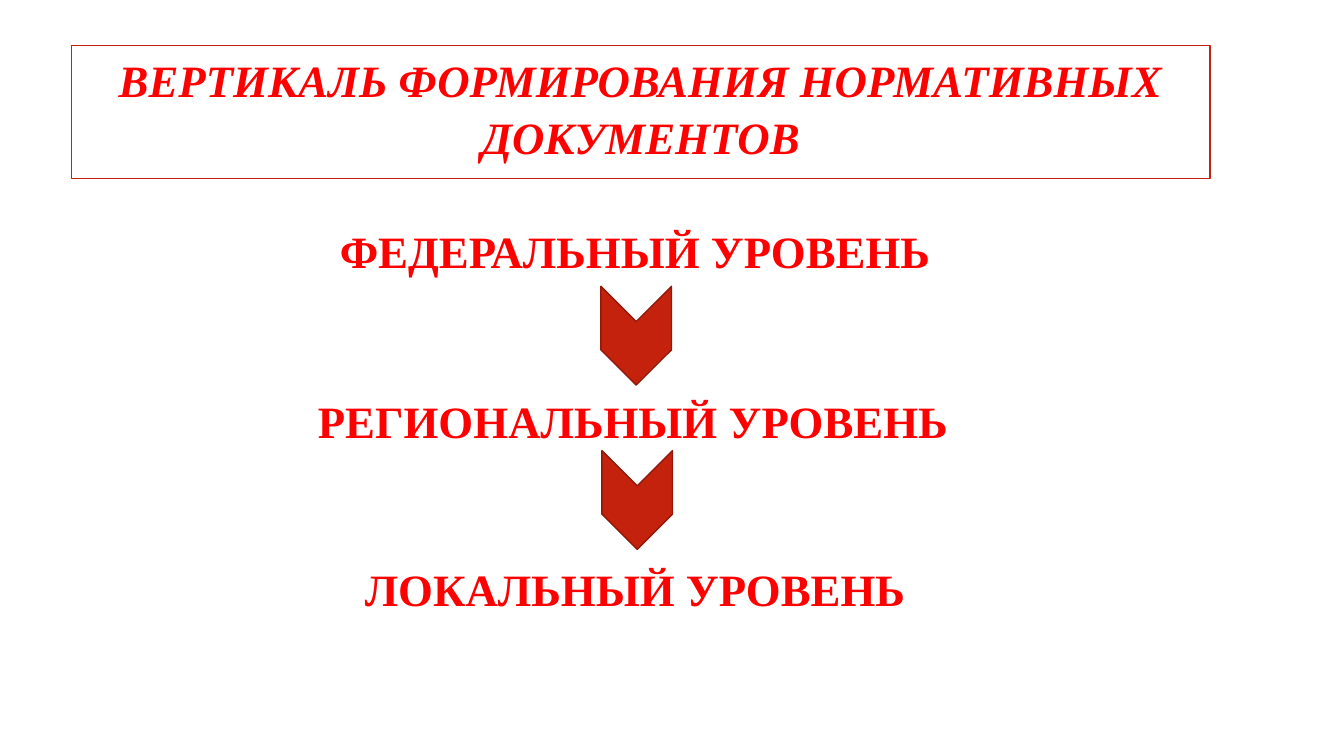
from pptx import Presentation
from pptx.dml.color import RGBColor
from pptx.enum.shapes import MSO_SHAPE as Shape
from pptx.enum.text import MSO_ANCHOR as Anchor, PP_ALIGN as Align
from pptx.util import Inches, Pt

COLORS = {"text": "FF0000", "paper": "FFFFFF", "accent": "C4220D", "edge": "91190A"}
LEVELS = [
    ("ФЕДЕРАЛЬНЫЙ УРОВЕНЬ", 3.02, 2.14),
    ("РЕГИОНАЛЬНЫЙ УРОВЕНЬ", 3.0, 3.83),
    ("ЛОКАЛЬНЫЙ УРОВЕНЬ", 3.02, 5.5),
]
CHEVRONS = [(5.82, 2.98), (5.83, 4.61)]


def color(name):
    return RGBColor.from_string(COLORS[name])


def write(frame, text, italic=False):
    frame.word_wrap = True
    frame.vertical_anchor = Anchor.TOP
    line = frame.paragraphs[0]
    line.text = text
    line.alignment = Align.CENTER
    line.line_spacing = 1.05
    font = line.font
    font.name, font.size = "Times New Roman", Pt(32)
    font.bold, font.italic = True, italic
    font.color.rgb = color("text")


def add_figure(slide, preset, left, top, width, height, fill, edge):
    figure = slide.shapes.add_shape(
        preset, Inches(left), Inches(top), Inches(width), Inches(height))
    figure.shadow.inherit = False
    figure.fill.solid()
    figure.fill.fore_color.rgb = color(fill)
    figure.line.color.rgb = color(edge)
    figure.line.width = Pt(1)
    return figure


def add_level(slide, text, left, top):
    level = slide.shapes.add_textbox(
        Inches(left), Inches(top), Inches(6.56), Inches(0.64))
    write(level.text_frame, text)


def main():
    deck = Presentation()
    deck.slide_width, deck.slide_height = Inches(13.33), Inches(7.5)
    slide = deck.slides.add_slide(deck.slide_layouts[6])

    # Framed heading
    heading = add_figure(slide, Shape.RECTANGLE, 0.71, 0.45, 11.29, 1.32, "paper", "accent")
    write(heading.text_frame, "ВЕРТИКАЛЬ ФОРМИРОВАНИЯ НОРМАТИВНЫХ ДОКУМЕНТОВ", italic=True)

    # Levels from top to bottom
    for text, left, top in LEVELS:
        add_level(slide, text, left, top)

    # Chevrons pointing down between levels
    for left, top in CHEVRONS:
        chevron = add_figure(slide, Shape.CHEVRON, left, top, 0.98, 0.7, "accent", "edge")
        chevron.rotation = 90

    deck.save("out.pptx")


if __name__ == "__main__":
    main()
